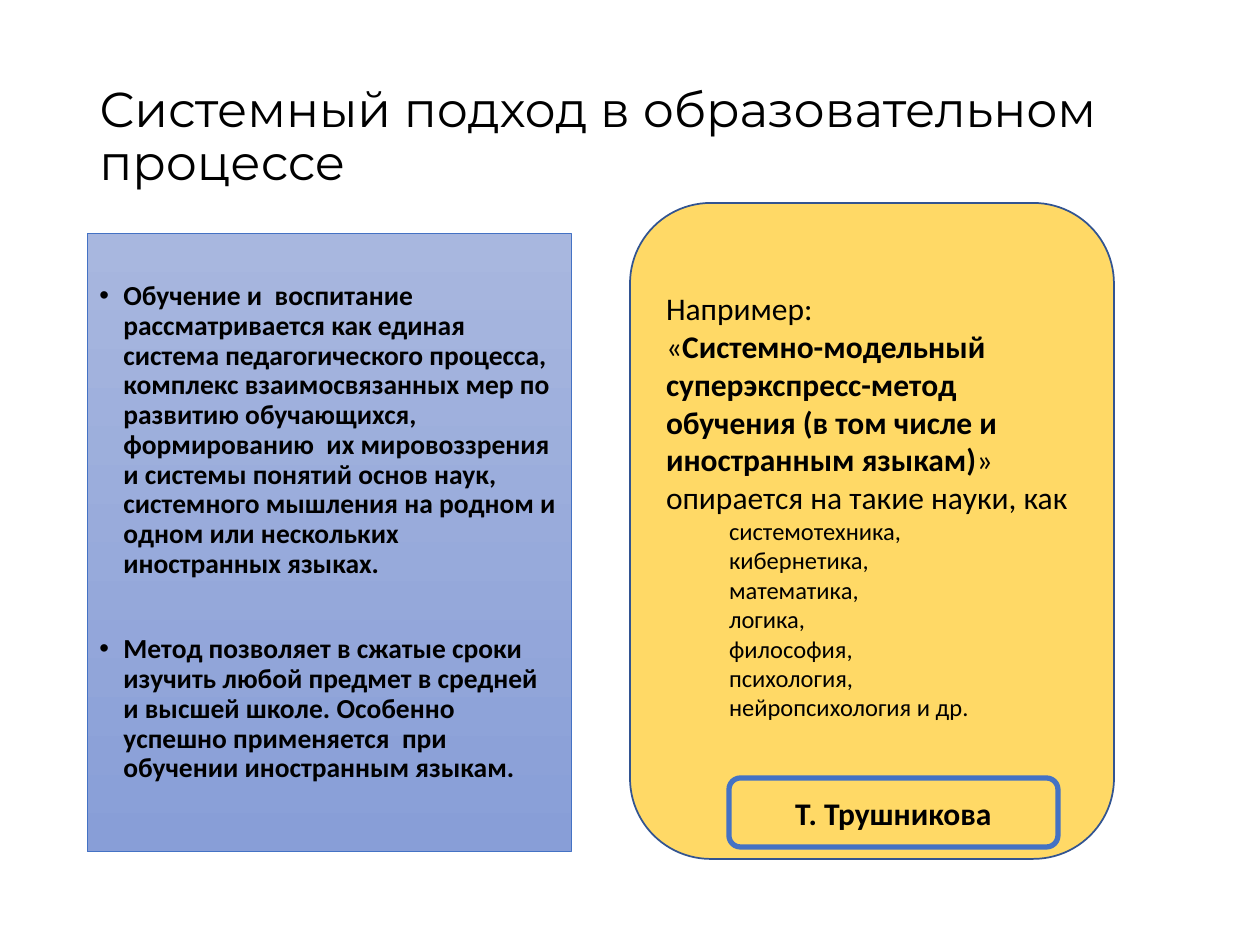
from pptx import Presentation
from pptx.dml.color import RGBColor
from pptx.enum.shapes import MSO_SHAPE as Shape
from pptx.enum.text import MSO_ANCHOR as Anchor, PP_ALIGN as Align
from pptx.oxml.ns import qn
from pptx.util import Emu, Pt
from lxml.etree import SubElement

PX = 914400 / 126
BLACK = RGBColor(0x00, 0x00, 0x00)
BLUE = RGBColor(0x44, 0x72, 0xC4)
NAVY = RGBColor(0x32, 0x54, 0x91)
GOLD = RGBColor(0xFF, 0xD9, 0x66)
PALE_BLUE = RGBColor(0xA8, 0xB7, 0xDF)
SOFT_BLUE = RGBColor(0x88, 0x9E, 0xD7)

TITLE = "Системный подход в образовательном процессе"
THESES = [
    "Обучение и  воспитание рассматривается как единая система педагогического "
    "процесса, комплекс взаимосвязанных мер по развитию обучающихся, "
    "формированию  их мировоззрения и системы понятий основ наук, системного "
    "мышления на родном и одном или нескольких иностранных языках.",
    "Метод позволяет в сжатые сроки изучить любой предмет в средней и высшей "
    "школе. Особенно успешно применяется  при обучении иностранным языкам.",
]
METHOD = ("Системно-модельный суперэкспресс-метод обучения "
          "(в том числе и иностранным языкам)")
SCIENCES = ["системотехника,", "кибернетика,", "математика,", "логика,",
            "философия,", "психология,", "нейропсихология и др."]
AUTHOR = "Т. Трушникова"


def px(length):
    return Emu(round(length * PX))


def style(paragraph, size, name="Calibri", bold=False):
    font = paragraph.font
    font.size, font.name, font.bold = Pt(size), name, bold
    font.color.rgb = BLACK


def indent(paragraph, margin, first_line=0):
    properties = paragraph._p.get_or_add_pPr()
    properties.set("marL", str(px(margin)))
    properties.set("indent", str(px(first_line)))
    return properties


def next_paragraph(frame, index):
    return frame.add_paragraph() if index else frame.paragraphs[0]


def add_panel(slide, preset, box, line_color, line_width):
    panel = slide.shapes.add_shape(preset, *map(px, box))
    panel.shadow.inherit = False
    panel.line.color.rgb = line_color
    panel.line.width = Pt(line_width)
    panel.text_frame.word_wrap = True
    return panel


def add_title(slide):
    frame = slide.shapes.add_textbox(*map(px, (87, 47, 1086, 183))).text_frame
    frame.word_wrap = True
    frame.vertical_anchor = Anchor.MIDDLE
    heading = frame.paragraphs[0]
    heading.text = TITLE
    heading.line_spacing = 0.9
    style(heading, 28, "Montserrat")


def add_theses(slide):
    panel = add_panel(slide, Shape.RECTANGLE, (87, 233, 484, 619), BLUE, 0.5)
    panel.fill.gradient()
    panel.fill.gradient_angle = 270
    for stop, color in zip(panel.fill.gradient_stops, (PALE_BLUE, SOFT_BLUE)):
        stop.color.rgb = color
    frame = panel.text_frame
    frame.vertical_anchor = Anchor.TOP
    frame.margin_top = px(49)
    for index, thesis in enumerate(THESES):
        paragraph = next_paragraph(frame, index)
        paragraph.text = thesis
        paragraph.alignment = Align.LEFT
        paragraph.line_spacing = 0.9
        if index:
            paragraph.space_before = Pt(32)
        properties = indent(paragraph, 24, -24)
        SubElement(properties, qn("a:buFont")).set("typeface", "Arial")
        SubElement(properties, qn("a:buChar")).set("char", "•")
        style(paragraph, 15.7, bold=True)


def add_example(slide):
    panel = add_panel(slide, Shape.ROUNDED_RECTANGLE, (630, 203, 484, 656), NAVY, 1)
    panel.fill.solid()
    panel.fill.fore_color.rgb = GOLD
    frame = panel.text_frame
    frame.vertical_anchor = Anchor.MIDDLE
    frame.margin_bottom = px(57)
    intro = frame.paragraphs[0]
    intro.text = "Например:"
    method = frame.add_paragraph()
    for text, bold in (("«", False), (METHOD, True),
                       ("» опирается на такие науки, как", False)):
        run = method.add_run()
        run.text = text
        run.font.bold = bold
    for paragraph in (intro, method):
        paragraph.alignment = Align.LEFT
        style(paragraph, 18)
    for science in SCIENCES:
        paragraph = frame.add_paragraph()
        paragraph.text = science
        paragraph.level = 1
        paragraph.alignment = Align.LEFT
        indent(paragraph, 63)
        style(paragraph, 14)


def add_author(slide):
    panel = add_panel(slide, Shape.ROUNDED_RECTANGLE, (729, 778, 329, 69), BLUE, 3)
    panel.fill.background()
    panel.text_frame.vertical_anchor = Anchor.MIDDLE
    name = panel.text_frame.paragraphs[0]
    name.text = AUTHOR
    name.alignment = Align.CENTER
    style(name, 18, bold=True)


def main():
    deck = Presentation()
    deck.slide_width, deck.slide_height = px(1260), px(945)
    slide = deck.slides.add_slide(deck.slide_layouts[6])
    add_title(slide)
    add_theses(slide)
    add_example(slide)
    add_author(slide)
    deck.save("out.pptx")


if __name__ == "__main__":
    main()
